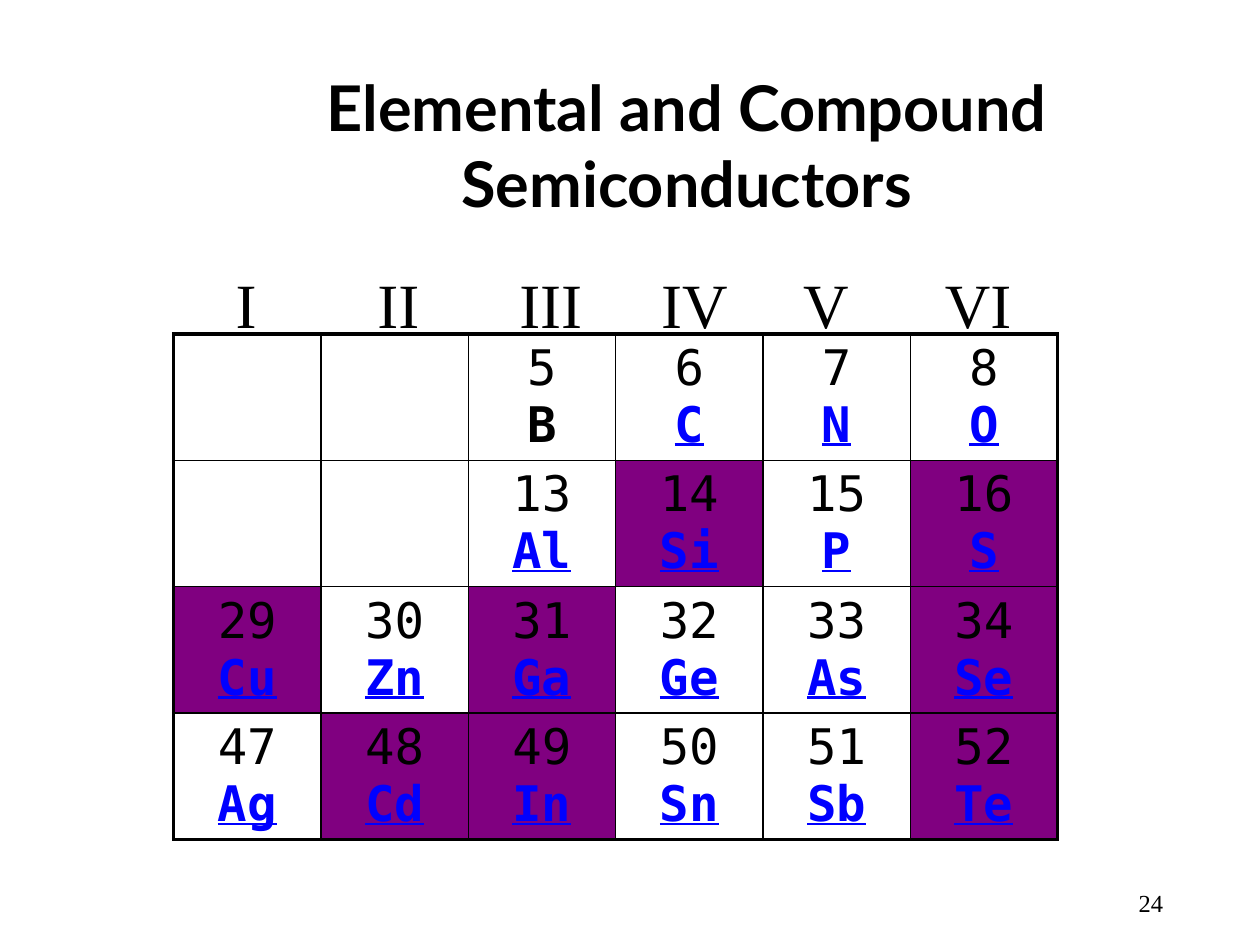
import dataclasses
import typing

import pptx
import pptx.dml.color
import pptx.enum.text
import pptx.oxml.ns
import pptx.util
from lxml import etree

Cm = pptx.util.Cm
Pt = pptx.util.Pt
RGB = pptx.dml.color.RGBColor
Align = pptx.enum.text.PP_ALIGN
Anchor = pptx.enum.text.MSO_ANCHOR
qn = pptx.oxml.ns.qn


@dataclasses.dataclass(frozen=True)
class Theme:
    ink: str = "000000"
    link: str = "0000FF"
    paper: str = "FFFFFF"
    mark: str = "800080"
    head: str = "Lato"
    body: str = "Times New Roman"
    mono: str = "DejaVu Sans Mono"
    large: float = 36
    mid: float = 28
    small: float = 14
    thick: float = 2.25
    thin: float = 1


@dataclasses.dataclass(frozen=True)
class Label:
    text: str
    box: tuple[float, float, float, float]
    face: str
    size: float
    bold: bool = False
    align: Align = Align.LEFT
    anchor: Anchor = Anchor.TOP
    tab: float = 0


class Atom(typing.NamedTuple):
    num: int
    sign: str
    mark: bool = False
    link: bool = True


THEME = Theme()
COLS = 6
STEP = 2.86  # gap between group numerals

LABELS = [
    Label("Elemental and Compound Semiconductors", (2.9, 1.32, 21.89, 3.18),
          THEME.head, THEME.large, True, Align.CENTER, Anchor.MIDDLE),
    Label("I\tII\tIII\tIV\tV\tVI", (4.5, 5.22, 16.79, 1.78),
          THEME.body, THEME.large, tab=STEP),
    Label("24", (18.42, 17.35, 5.28, 1.27),
          THEME.body, THEME.small, align=Align.RIGHT, anchor=Anchor.BOTTOM),
]

# Rows are filled from the right, so short rows leave empty cells on the left
ATOMS = [
    [Atom(5, "B", link=False), Atom(6, "C"), Atom(7, "N"), Atom(8, "O")],
    [Atom(13, "Al"), Atom(14, "Si", True), Atom(15, "P"), Atom(16, "S", True)],
    [Atom(29, "Cu", True), Atom(30, "Zn"), Atom(31, "Ga", True),
     Atom(32, "Ge"), Atom(33, "As"), Atom(34, "Se", True)],
    [Atom(47, "Ag"), Atom(48, "Cd", True), Atom(49, "In", True),
     Atom(50, "Sn"), Atom(51, "Sb"), Atom(52, "Te", True)],
]


def style(run, face: str, size: float, tint: str, bold: bool = False) -> None:
    run.font.name = face
    run.font.size = Pt(size)
    run.font.bold = bold
    run.font.color.rgb = RGB.from_string(tint)


def add_label(slide, label: Label) -> None:
    frame = slide.shapes.add_textbox(*map(Cm, label.box)).text_frame
    frame.word_wrap = True
    frame.vertical_anchor = label.anchor
    frame.text = label.text
    para = frame.paragraphs[0]
    para.alignment = label.align
    if label.tab:
        stops = etree.SubElement(para._p.get_or_add_pPr(), qn("a:tabLst"))
        for i in range(1, COLS):
            etree.SubElement(stops, qn("a:tab"), pos=str(Cm(label.tab * i)), algn="l")
    for run in para.runs:
        style(run, label.face, label.size, THEME.ink, label.bold)


def add_edge(cell, side: str, width: float) -> None:
    line = etree.SubElement(cell._tc.get_or_add_tcPr(), qn(f"a:ln{side}"),
                            w=str(Pt(width)))
    fill = etree.SubElement(line, qn("a:solidFill"))
    etree.SubElement(fill, qn("a:srgbClr"), val=THEME.ink)


def fill_cell(cell, atom: Atom | None) -> None:
    cell.fill.solid()
    tint = THEME.mark if atom and atom.mark else THEME.paper
    cell.fill.fore_color.rgb = RGB.from_string(tint)
    if atom is None:
        return
    para = cell.text_frame.paragraphs[0]
    para.text = f"{atom.num}\v{atom.sign}"
    para.alignment = Align.CENTER
    num, sign = para.runs
    style(num, THEME.mono, THEME.mid, THEME.ink)
    style(sign, THEME.mono, THEME.mid, THEME.link if atom.link else THEME.ink, True)
    sign.font.underline = atom.link


def add_grid(slide, left: float, top: float, wide: float, high: float) -> None:
    rows = len(ATOMS)
    table = slide.shapes.add_table(rows, COLS, Cm(left), Cm(top),
                                   Cm(wide * COLS), Cm(high * rows)).table
    table.first_row = table.horz_banding = False
    for r, atoms in enumerate(ATOMS):
        line = [None] * (COLS - len(atoms)) + atoms
        for c, atom in enumerate(line):
            cell = table.cell(r, c)
            outer = {"L": c == 0, "R": c == COLS - 1, "T": r == 0, "B": r == rows - 1}
            for side, edge in outer.items():
                add_edge(cell, side, THEME.thick if edge else THEME.thin)
            fill_cell(cell, atom)


def main() -> None:
    deck = pptx.Presentation()
    deck.slide_width, deck.slide_height = Cm(25.4), Cm(19.05)
    slide = deck.slides.add_slide(deck.slide_layouts[6])

    # Periodic table section
    add_grid(slide, 3.5, 6.73, 2.97, 2.55)

    # Title, group numerals and page number
    for label in LABELS:
        add_label(slide, label)

    deck.save("out.pptx")


if __name__ == "__main__":
    main()
